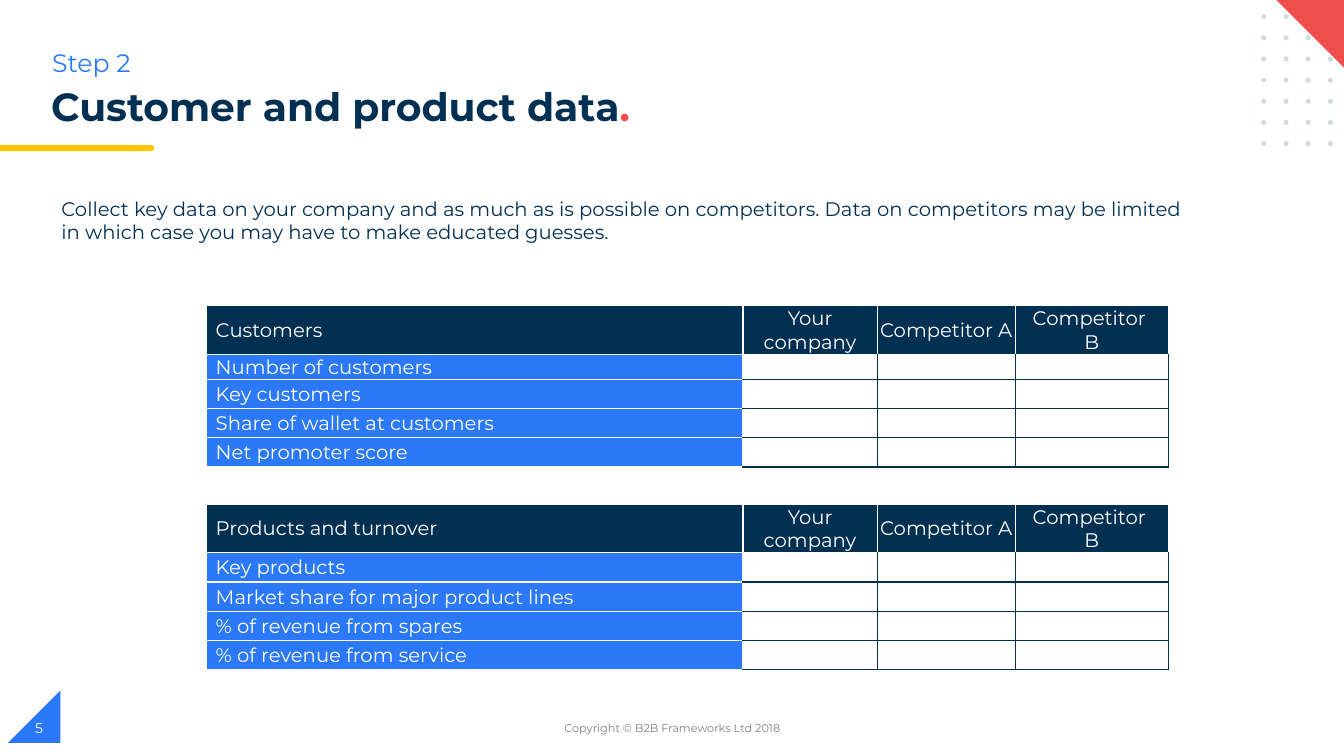
import pptx
import pptx.util
import pptx.dml.color
import pptx.enum.shapes
import pptx.enum.text
import pptx.oxml
import pptx.oxml.ns

Inches, Pt = pptx.util.Inches, pptx.util.Pt
SHAPE = pptx.enum.shapes.MSO_SHAPE
ALIGN = pptx.enum.text.PP_ALIGN
ANCHOR = pptx.enum.text.MSO_ANCHOR

COLORS = {
    "navy": "023053", "blue": "2B79F8", "red": "F24E4E", "yellow": "FFC600",
    "dot": "D1DBE0", "grey": "7F7F7F", "white": "FFFFFF",
}
FONT = "Montserrat"
INTRO = (
    "Collect key data on your company and as much as is possible on competitors. "
    "Data on competitors may be limited in which case you may have to make educated guesses."
)
COMPANIES = ["Your company", "Competitor A", "Competitor \nB"]
TABLES = [
    (3.03, [0.48, 0.25, 0.29, 0.29, 0.29], "Customers",
     ["Number of customers", "Key customers", "Share of wallet at customers",
      "Net promoter score"]),
    (5, [0.48, 0.29, 0.29, 0.29, 0.29], "Products and turnover",
     ["Key products", "Market share for major product lines",
      "% of revenue from spares", "% of revenue from service"]),
]
TABLE_LEFT = 2.05
COL_WIDTHS = [5.32, 1.33, 1.37, 1.52]
DOT_LEFT, DOT_TOP, DOT_SIZE = 12.51, 0.14, 0.05
DOT_STEP_X, DOT_STEP_Y = 0.22, 0.21
DOT_COLS, DOT_ROWS = 4, 7


def rgb(name):
    return pptx.dml.color.RGBColor.from_string(COLORS[name])


def style(r, size, color, bold=False):
    r.font.name = FONT
    r.font.size = Pt(size)
    r.font.bold = bold
    r.font.color.rgb = rgb(color)


def add_shape(slide, kind, box, color, rotation=0):
    s = slide.shapes.add_shape(kind, *map(Inches, box))
    s.shadow.inherit = False
    s.fill.solid()
    s.fill.fore_color.rgb = rgb(color)
    s.line.fill.background()
    s.rotation = rotation


def add_text(slide, box, runs, size, bold=False, align=ALIGN.LEFT,
             anchor=ANCHOR.TOP, spacing=1.0):
    tf = slide.shapes.add_textbox(*map(Inches, box)).text_frame
    tf.word_wrap = True
    tf.vertical_anchor = anchor
    p = tf.paragraphs[0]
    p.alignment = align
    p.line_spacing = spacing
    for text, color in runs:
        r = p.add_run()
        r.text = text
        style(r, size, color, bold)


def add_border(cell, side, color):
    cell._tc.get_or_add_tcPr().append(pptx.oxml.parse_xml(
        f'<a:ln{side} {pptx.oxml.ns.nsdecls("a")} w="12700"><a:solidFill>'
        f'<a:srgbClr val="{COLORS[color]}"/></a:solidFill></a:ln{side}>'))


def fill_cell(cell, row, col, text):
    cell.margin_left = cell.margin_right = cell.margin_top = Inches(0.01)
    cell.margin_bottom = 0
    cell.vertical_anchor = ANCHOR.MIDDLE
    open_cell = row > 0 and col > 0
    inner = "navy" if open_cell else "white"
    sides = {
        "L": "white" if col == 1 else inner,
        "R": inner,
        "T": "white" if row == 1 else inner,
        "B": inner,
    }
    for side, color in sides.items():
        add_border(cell, side, color)
    if open_cell:
        cell.fill.background()
        cell.text_frame.paragraphs[0]._p.append(pptx.oxml.parse_xml(
            f'<a:endParaRPr {pptx.oxml.ns.nsdecls("a")} sz="1000"/>'))
        return
    cell.fill.solid()
    cell.fill.fore_color.rgb = rgb("blue" if row else "navy")
    cell.text_frame.text = text
    for p in cell.text_frame.paragraphs:
        if col:
            p.alignment = ALIGN.CENTER
        else:
            p._p.get_or_add_pPr().set("marL", str(Inches(0.08)))
        for r in p.runs:
            style(r, 14, "white")


def add_data_table(slide, top, heights, heading, labels):
    frame = slide.shapes.add_table(
        len(heights), len(COL_WIDTHS), Inches(TABLE_LEFT), Inches(top),
        Inches(sum(COL_WIDTHS)), Inches(sum(heights)))
    table = frame.table
    table.first_row = table.horz_banding = False
    for column, width in zip(table.columns, COL_WIDTHS):
        column.width = Inches(width)
    for row, height in zip(table.rows, heights):
        row.height = Inches(height)
    grid = [[heading] + COMPANIES] + [[label, "", "", ""] for label in labels]
    for i, values in enumerate(grid):
        for j, text in enumerate(values):
            fill_cell(table.cell(i, j), i, j, text)


def main():
    prs = pptx.Presentation()
    prs.slide_width, prs.slide_height = Inches(13.33), Inches(7.5)
    slide = prs.slides.add_slide(prs.slide_layouts[6])

    add_shape(slide, SHAPE.RIGHT_TRIANGLE, (0.08, 6.85, 0.52, 0.52), "blue", 270)
    add_shape(slide, SHAPE.FLOWCHART_TERMINATOR, (1.34, 1.44, 0.19, 0.06), "yellow")
    add_shape(slide, SHAPE.RECTANGLE, (0, 1.44, 1.41, 0.06), "yellow")
    for i in range(DOT_ROWS):
        for j in range(DOT_COLS):
            x, y = DOT_LEFT + j * DOT_STEP_X, DOT_TOP + i * DOT_STEP_Y
            add_shape(slide, SHAPE.OVAL, (x, y, DOT_SIZE, DOT_SIZE), "dot")
    add_shape(slide, SHAPE.RIGHT_TRIANGLE, (12.65, -0.01, 0.72, 0.72), "red", 180)

    for table in TABLES:
        add_data_table(slide, *table)

    add_text(slide, (0.51, 1.9, 11.42, 0.57), [(INTRO, "navy")], 14)
    add_text(slide, (0.41, 0.82, 8.17, 0.56),
             [("Customer and product data", "navy"), (".", "red")], 28,
             bold=True, spacing=0.9)
    add_text(slide, (0.42, 0.42, 1.06, 0.4), [("Step 2", "blue")], 18)
    add_text(slide, (4.42, 7.02, 4.5, 0.4),
             [("Copyright © B2B Frameworks Ltd 2018", "grey")], 8,
             align=ALIGN.CENTER, anchor=ANCHOR.MIDDLE)
    add_text(slide, (0.25, 7.02, 3, 0.4), [("5", "white")], 10, anchor=ANCHOR.MIDDLE)

    prs.save("out.pptx")


if __name__ == "__main__":
    main()
